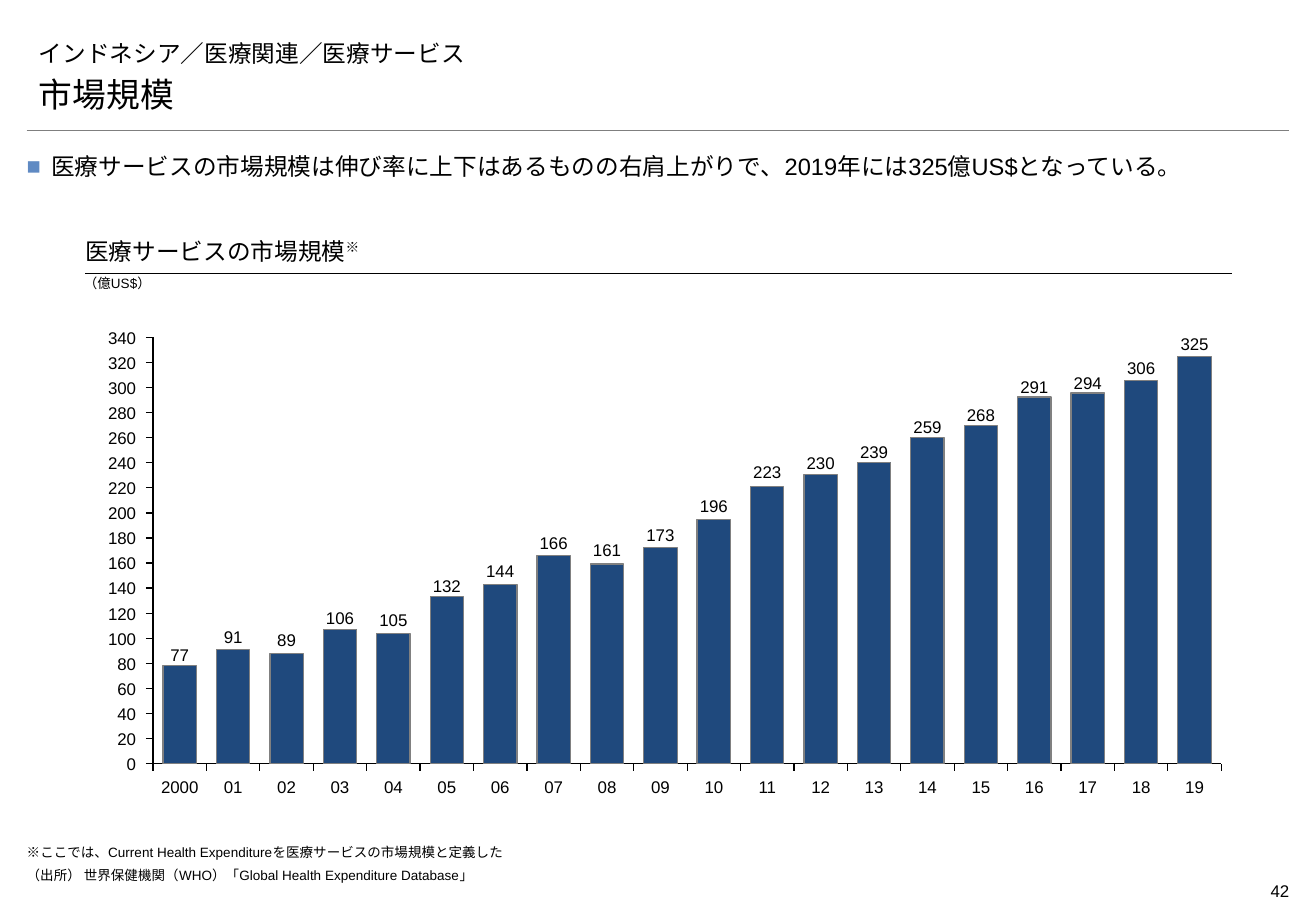
from pptx import Presentation
from pptx.chart.data import CategoryChartData
from pptx.dml.color import RGBColor
from pptx.enum.chart import XL_CHART_TYPE, XL_TICK_LABEL_POSITION, XL_TICK_MARK
from pptx.enum.shapes import MSO_CONNECTOR
from pptx.enum.text import MSO_ANCHOR, MSO_AUTO_SIZE, PP_ALIGN
from pptx.oxml.ns import qn
from pptx.util import Inches, Pt
from lxml import etree

STACKED = XL_CHART_TYPE.COLUMN_STACKED
OUTSIDE = XL_TICK_MARK.OUTSIDE
NO_TICK = XL_TICK_MARK.NONE
NO_LABEL = XL_TICK_LABEL_POSITION.NONE
STRAIGHT = MSO_CONNECTOR.STRAIGHT
TOP, MIDDLE, BOTTOM = MSO_ANCHOR.TOP, MSO_ANCHOR.MIDDLE, MSO_ANCHOR.BOTTOM
LEFT, RIGHT, JUSTIFY = PP_ALIGN.LEFT, PP_ALIGN.RIGHT, PP_ALIGN.JUSTIFY
CENTER = PP_ALIGN.CENTER
NO_FIT = MSO_AUTO_SIZE.NONE

BLACK, GRAY, NAVY, BLUE = "000000", "7F7F7F", "1F497D", "5F8AC3"
EDGE = 0.22
WIDE = 10.39
YEARS = ["2000"] + [f"{year:02d}" for year in range(1, 20)]
SPEND = [77, 91, 89, 106, 105, 132, 144, 166, 161, 173,
         196, 223, 230, 239, 259, 268, 291, 294, 306, 325]
LEVELS = [24, 28, 27, 33, 32, 41, 44, 51, 49, 53,
          60, 68, 71, 74, 80, 83, 90, 91, 94, 100]
PEAK, LIMIT, STEP = 325, 340, 20
FRAME = (1.17, 2.69, 8.97, 3.69)
SHARES = {"x": 0.01, "y": 0.024, "w": 0.98, "h": 0.951}
PLOT_LEFT = FRAME[0] + FRAME[2] * SHARES["x"]
PLOT_WIDE = FRAME[2] * SHARES["w"]
PLOT_TALL = FRAME[3] * SHARES["h"]
BASE = FRAME[1] + FRAME[3] * SHARES["y"] + PLOT_TALL


def color(code):
    return RGBColor.from_string(code)


def style(font, size=10, face="Arial", ink=BLACK):
    font.size = Pt(size)
    font.name = face
    font.bold = False
    font.color.rgb = color(ink)


def stroke(line, ink, width):
    line.color.rgb = color(ink)
    line.width = Pt(width)


def add_bullet(para, mark, ink, indent):
    props = para._p.get_or_add_pPr()
    props.set("marL", str(Inches(indent)))
    props.set("indent", str(-Inches(indent)))
    if not mark:
        etree.SubElement(props, qn("a:buNone"))
        return
    tint = etree.SubElement(props, qn("a:buClr"))
    etree.SubElement(tint, qn("a:srgbClr"), val=ink)
    etree.SubElement(props, qn("a:buFont"), typeface="Arial")
    etree.SubElement(props, qn("a:buChar"), char=mark)


def put_text(shape, text, box, size=8, face="Arial", align=LEFT, anchor=TOP,
             inset=(0, 0, 0, 0), mark="", ink=BLUE, indent=0,
             space=1, after=0, raised=""):
    shape.left, shape.top, shape.width, shape.height = map(Inches, box)
    frame = shape.text_frame
    frame.auto_size = NO_FIT
    frame.word_wrap = True
    frame.vertical_anchor = anchor
    (frame.margin_left, frame.margin_top,
     frame.margin_right, frame.margin_bottom) = map(Inches, inset)
    para = frame.paragraphs[0]
    para.alignment = align
    para.line_spacing = space
    para.space_before = Pt(0)
    para.space_after = Pt(after)
    add_bullet(para, mark, ink, indent)
    for part in filter(None, (text, raised)):
        run = para.add_run()
        run.text = part
        style(run.font, size, face)
        if part == raised:
            run._r.get_or_add_rPr().set("baseline", "30000")


def add_text(slide, text, box, **form):
    put_text(slide.shapes.add_textbox(0, 0, 0, 0), text, box, **form)


def add_rule(slide, left, right, top, ink, width):
    rule = slide.shapes.add_connector(
        STRAIGHT, Inches(left), Inches(top), Inches(right), Inches(top))
    stroke(rule.line, ink, width)
    etree.SubElement(rule._element.spPr, qn("a:effectLst"))


def fix_plot(chart):
    area = chart._chartSpace.chart.plotArea
    for old in area.findall(qn("c:layout")):
        area.remove(old)
    layout = etree.Element(qn("c:layout"))
    area.insert(0, layout)
    manual = etree.SubElement(layout, qn("c:manualLayout"))
    etree.SubElement(manual, qn("c:layoutTarget"), val="inner")
    for side in "xy":
        etree.SubElement(manual, qn(f"c:{side}Mode"), val="edge")
    for side, share in SHARES.items():
        etree.SubElement(manual, qn(f"c:{side}"), val=str(share))


def add_columns(slide):
    data = CategoryChartData()
    data.categories = [str(place + 1) for place in range(len(LEVELS))]
    data.add_series("Series 1", LEVELS)
    chart = slide.shapes.add_chart(STACKED, *map(Inches, FRAME), data).chart
    chart.has_legend = False
    chart.has_title = False
    style(chart.font)
    for axis in (chart.category_axis, chart.value_axis):
        axis.has_major_gridlines = False
        axis.major_tick_mark = OUTSIDE
        axis.minor_tick_mark = NO_TICK
        axis.tick_label_position = NO_LABEL
        stroke(axis.format.line, BLACK, 0.75)
    scale = chart.value_axis
    scale.minimum_scale = 0
    scale.maximum_scale = 100 * LIMIT / PEAK
    scale.major_unit = 100 * STEP / PEAK
    plot = chart.plots[0]
    plot.gap_width = 60
    plot.overlap = 100
    plot.vary_by_categories = False
    bars = plot.series[0]
    bars.format.fill.solid()
    bars.format.fill.fore_color.rgb = color(NAVY)
    stroke(bars.format.line, "808080", 0.75)
    fix_plot(chart)


def level(value):
    return BASE - PLOT_TALL * value / LIMIT


def add_labels(slide):
    wide, tall = 0.4, 0.17
    for value in range(0, LIMIT + STEP, STEP):
        add_text(slide, str(value),
                 (1.12 - wide, level(value) - tall / 2, wide, tall),
                 size=10, align=RIGHT, anchor=MIDDLE)
    pitch = PLOT_WIDE / len(YEARS)
    for place, (year, value) in enumerate(zip(YEARS, SPEND)):
        left = PLOT_LEFT + pitch * (place + 0.5) - wide / 2
        add_text(slide, year, (left, 6.39, wide, tall), size=10, align=CENTER)
        add_text(slide, str(value),
                 (left, level(value) - 0.02 - tall, wide, tall),
                 size=10, align=CENTER, anchor=BOTTOM)


def main():
    deck = Presentation()
    deck.slide_width, deck.slide_height = Inches(10.83), Inches(7.5)
    slide = deck.slides.add_slide(deck.slide_layouts[3])
    title, topic, points = slide.placeholders
    head = dict(face="Montserrat", anchor=BOTTOM, inset=(0.1, 0.05, 0.1, 0.05))
    put_text(title, "インドネシア／医療関連／医療サービス",
             (EDGE, 0.21, WIDE, 0.39), size=14, **head)
    put_text(topic, "市場規模", (EDGE, 0.6, WIDE, 0.39), size=20, **head)
    put_text(points, "医療サービスの市場規模は伸び率に上下はあるものの右肩上がりで、"
             "2019年には325億US$となっている。", (EDGE, 1.23, WIDE, 0.24),
             size=14, align=JUSTIFY, mark="■", indent=0.2, space=1.1, after=2)
    add_rule(slide, EDGE, EDGE + WIDE, 1.07, GRAY, 0.25)

    add_text(slide, "医療サービスの市場規模", (0.7, 1.95, 9.45, 0.31),
             size=14, face="Montserrat", anchor=BOTTOM,
             inset=(0, 0.05, 0, 0.08), raised="※")
    add_rule(slide, 0.7, 10.14, 2.25, BLACK, 0.75)
    add_text(slide, "（億US$）", (0.69, 2.25, 0.91, 0.16), anchor=MIDDLE)
    add_columns(slide)
    add_labels(slide)

    add_text(slide, "※ここでは、Current Health Expenditureを医療サービスの市場規模と定義した",
             (EDGE, 6.95, 8.35, 0.13))
    add_text(slide, "（出所） 世界保健機関（WHO）「Global Health Expenditure Database」",
             (EDGE, 7.14, 6.14, 0.16))
    add_text(slide, "42", (9.83, 7.2, 0.78, 0.27), size=10, align=RIGHT,
             inset=(0, 0.05, 0, 0.05))
    deck.save("out.pptx")


if __name__ == "__main__":
    main()
